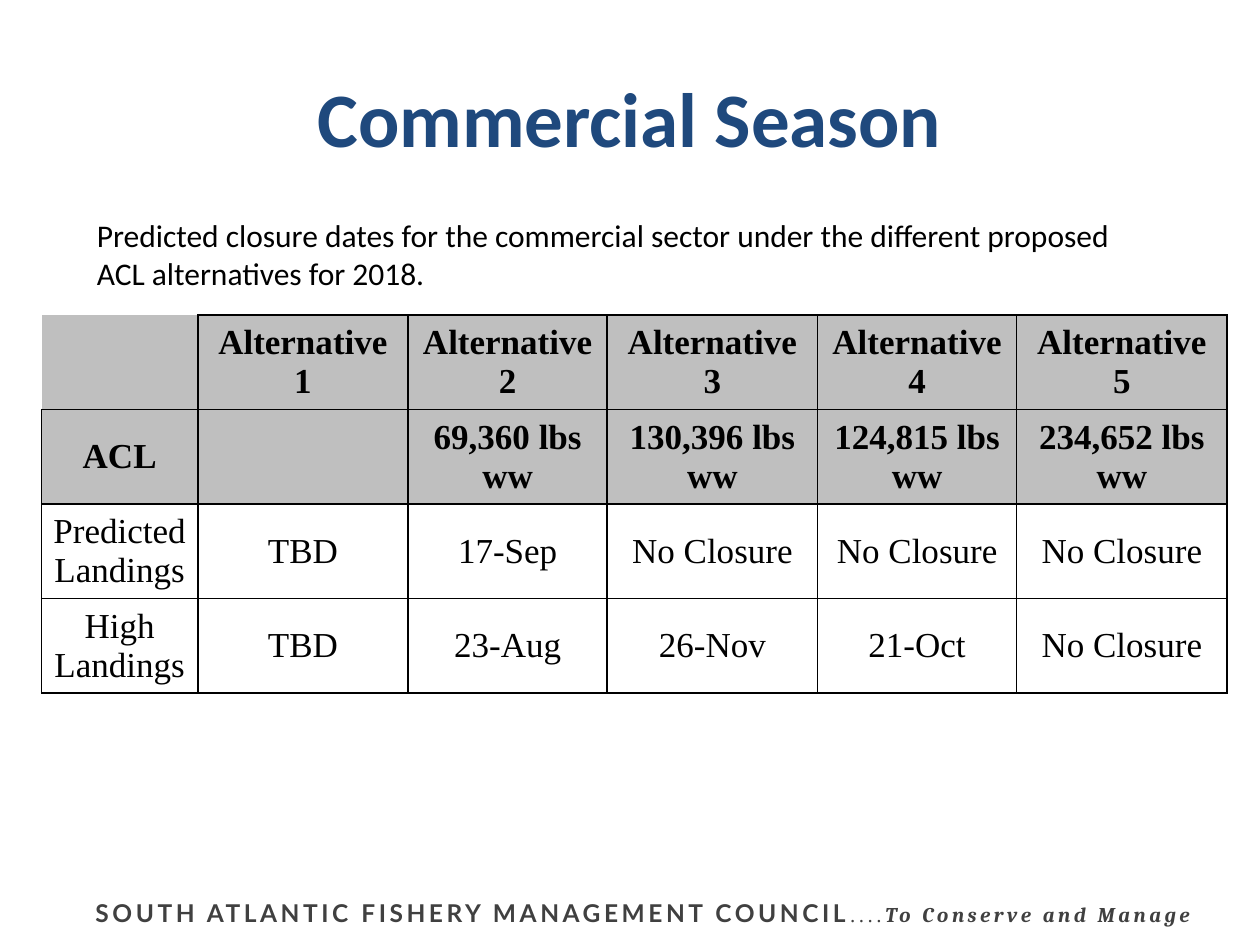
from dataclasses import dataclass

from lxml.etree import SubElement
from pptx import Presentation
from pptx.dml.color import RGBColor
from pptx.enum.text import MSO_ANCHOR as Anchor, MSO_AUTO_SIZE as AutoSize, PP_ALIGN as Align
from pptx.oxml.ns import qn
from pptx.util import Inches, Pt

BLACK = RGBColor(0x00, 0x00, 0x00)
NAVY = RGBColor(0x1F, 0x49, 0x7D)
GREY = RGBColor(0xBF, 0xBF, 0xBF)
CHARCOAL = RGBColor(0x40, 0x40, 0x40)

WIDTH, HEIGHT = Inches(10), Inches(7.5)
LABEL_COL, WIDE_COL, NARROW_COL = Inches(1.24), Inches(1.67), Inches(1.58)
COLUMNS = [LABEL_COL, WIDE_COL, NARROW_COL, WIDE_COL, NARROW_COL, WIDE_COL]
ROW_HEIGHT = HEIGHT // 10
HEADER_ROWS = 2

SEASONS = [
    ["", *(f"Alternative {n}" for n in range(1, 6))],
    ["ACL", "", "69,360 lbs ww", "130,396 lbs ww", "124,815 lbs ww", "234,652 lbs ww"],
    ["Predicted Landings", "TBD", "17-Sep", "No Closure", "No Closure", "No Closure"],
    ["High Landings", "TBD", "23-Aug", "26-Nov", "21-Oct", "No Closure"],
]


@dataclass(frozen=True)
class Box:
    """A rectangle in shares of the slide's width and height."""
    x: float
    y: float
    w: float
    h: float

    def emu(self) -> tuple[int, int, int, int]:
        return (round(self.x * WIDTH), round(self.y * HEIGHT),
                round(self.w * WIDTH), round(self.h * HEIGHT))


@dataclass(frozen=True)
class Style:
    name: str
    size: int
    color: RGBColor = BLACK
    bold: bool = False
    italic: bool = False

    def apply(self, font) -> None:
        font.name, font.size = self.name, Pt(self.size)
        font.bold, font.italic = self.bold, self.italic
        font.color.rgb = self.color


FOOTER = [
    ("SOUTH ATLANTIC FISHERY MANAGEMENT COUNCIL", Style("Lato", 14, CHARCOAL, bold=True)),
    ("....", Style("Times New Roman", 12, CHARCOAL)),
    ("To Conserve and Manage", Style("Cambria", 12, CHARCOAL, bold=True, italic=True)),
]


def add_text_box(slide, box: Box):
    """Add a wrapping text box and return its first paragraph."""
    tf = slide.shapes.add_textbox(*box.emu()).text_frame
    tf.word_wrap = True
    tf.auto_size = AutoSize.SHAPE_TO_FIT_TEXT
    return tf.paragraphs[0]


def add_footer(slide, box: Box) -> None:
    p = add_text_box(slide, box)
    for text, style in FOOTER:
        r = p.add_run()
        r.text = text
        style.apply(r.font)
        r.font._element.set("spc", "200")


def set_borders(cell, sides: str) -> None:
    tc_pr = cell._tc.get_or_add_tcPr()
    for side in "LRTB":
        drawn = side in sides
        ln = SubElement(tc_pr, qn(f"a:ln{side}"), w=str(Pt(1) if drawn else 0))
        if drawn:
            fill = SubElement(ln, qn("a:solidFill"))
            SubElement(fill, qn("a:srgbClr"), val=str(BLACK))
        else:
            SubElement(ln, qn("a:noFill"))


def fill_cell(cell, text: str, header: bool, sides: str) -> None:
    set_borders(cell, sides)
    if header:
        cell.fill.solid()
        cell.fill.fore_color.rgb = GREY
    else:
        cell.fill.background()
    cell.vertical_anchor = Anchor.MIDDLE
    cell.margin_left = cell.margin_right = Inches(0.07)
    cell.margin_top = cell.margin_bottom = 0
    cell.text = text
    p = cell.text_frame.paragraphs[0]
    p.alignment = Align.CENTER
    Style("Times New Roman", 20, bold=header).apply(p.font)


def add_season_table(slide, x: float, y: float) -> None:
    table = slide.shapes.add_table(
        len(SEASONS), len(COLUMNS), round(x * WIDTH), round(y * HEIGHT),
        sum(COLUMNS), ROW_HEIGHT * len(SEASONS)).table
    table.first_row = table.horz_banding = False
    for column, width in zip(table.columns, COLUMNS):
        column.width = width
    for i, texts in enumerate(SEASONS):
        table.rows[i].height = ROW_HEIGHT
        for j, text in enumerate(texts):
            corner = i == j == 0
            fill_cell(table.cell(i, j), text, i < HEADER_ROWS, "RB" if corner else "LRTB")


def main() -> None:
    prs = Presentation()
    prs.slide_width, prs.slide_height = WIDTH, HEIGHT
    slide = prs.slides.add_slide(prs.slide_layouts.get_by_name("Title Only"))

    add_footer(slide, Box(0.066, 0.944, 0.934, 0.045))

    title = slide.shapes.title
    title.left, title.top, title.width, title.height = Box(0.05, 0.04, 0.9, 1 / 6).emu()
    title.text_frame.text = "Commercial Season"
    title.text_frame.vertical_anchor = Anchor.MIDDLE
    p = title.text_frame.paragraphs[0]
    p.alignment = Align.CENTER
    Style("Calibri", 44, NAVY, bold=True).apply(p.font)

    add_season_table(slide, 0.033, 1 / 3)

    p = add_text_box(slide, Box(0.067, 0.222, 0.842, 0.094))
    p.text = ("Predicted closure dates for the commercial sector under the "
              "different proposed ACL alternatives for 2018.")
    Style("Calibri", 18).apply(p.font)

    prs.save("out.pptx")


if __name__ == "__main__":
    main()
